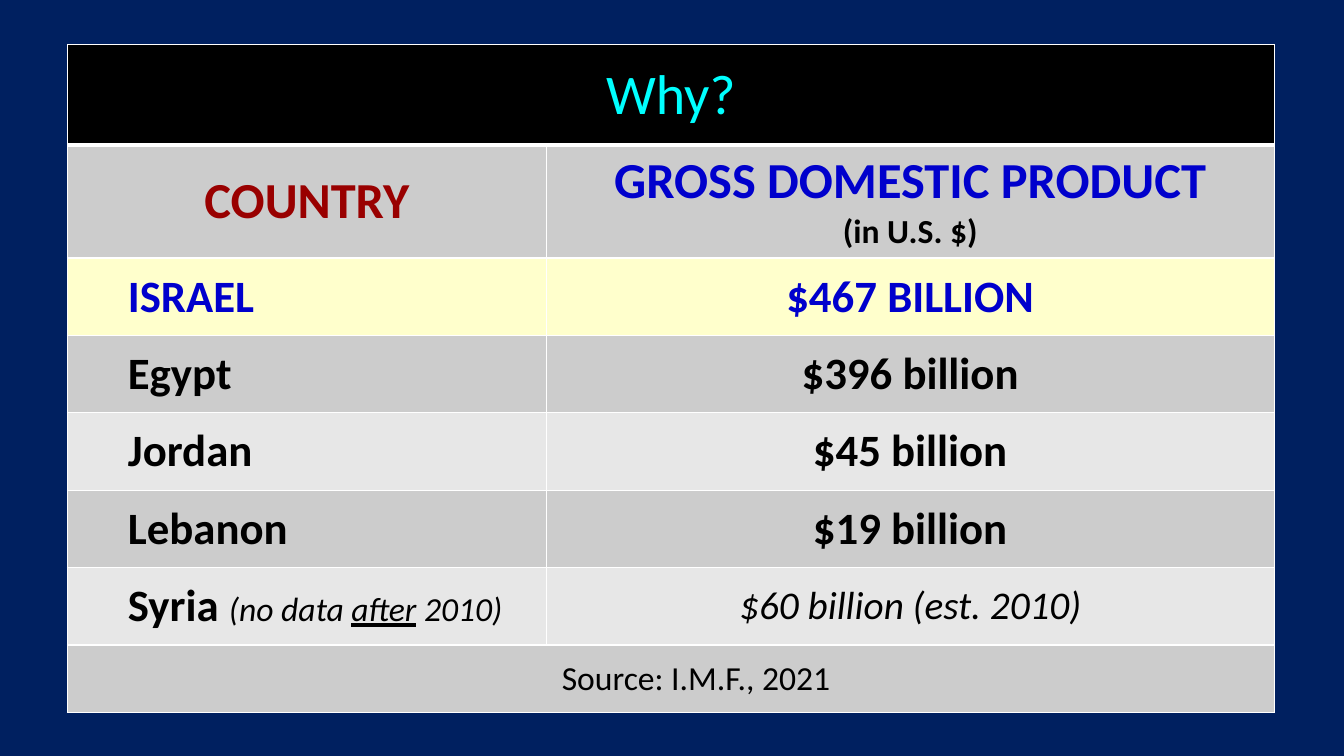
import dataclasses

import lxml.etree
import pptx
import pptx.dml.color
import pptx.enum.text
import pptx.oxml.ns
import pptx.util

Cm = pptx.util.Cm
Pt = pptx.util.Pt
CENTER = pptx.enum.text.PP_ALIGN.CENTER
LEFT = pptx.enum.text.PP_ALIGN.LEFT


@dataclasses.dataclass(frozen=True)
class Theme:
    font: str = "Calibri"
    navy: str = "002060"
    black: str = "000000"
    white: str = "FFFFFF"
    cyan: str = "00FFFF"
    red: str = "990000"
    blue: str = "0000CC"
    yellow: str = "FFFFCC"
    gray: str = "CCCCCC"
    light: str = "E7E7E7"
    title: int = 40
    heading: int = 36
    body: int = 32
    estimate: int = 28
    small: int = 24


THEME = Theme()


def rgb(color):
    return pptx.dml.color.RGBColor.from_string(color)


def add_text(paragraph, text, size=THEME.body, color=THEME.black, bold=True, italic=False, underline=False):
    run = paragraph.add_run()
    run.text = text
    font = run.font
    font.name, font.size = THEME.font, Pt(size)
    font.bold, font.italic, font.underline = bold, italic, underline
    font.color.rgb = rgb(color)


class GdpSlide:
    """Holds the theme and the slide, and draws the table on it."""

    def __init__(self, deck, theme):
        self.theme = theme
        self.slide = deck.slides.add_slide(deck.slide_layouts[6])
        self.slide.background.fill.solid()
        self.slide.background.fill.fore_color.rgb = rgb(theme.navy)

    def table(self, left, top, widths, heights):
        frame = self.slide.shapes.add_table(
            len(heights), len(widths), Cm(left), Cm(top), Cm(sum(widths)), Cm(sum(heights)))
        for column, width in zip(frame.table.columns, widths):
            column.width = Cm(width)
        for row, height in zip(frame.table.rows, heights):
            row.height = Cm(height)
        return frame.table

    def cell(self, cell, fill, bottom=1):
        cell.fill.solid()
        cell.fill.fore_color.rgb = rgb(fill)
        cell.vertical_anchor = pptx.enum.text.MSO_ANCHOR.MIDDLE
        properties = cell._tc.get_or_add_tcPr()
        sides = {"lnL": 1, "lnR": 1, "lnT": 1, "lnB": bottom}
        for position, (side, width) in enumerate(sides.items()):
            line = lxml.etree.Element(pptx.oxml.ns.qn("a:" + side), w=str(Pt(width)))
            solid = lxml.etree.SubElement(line, pptx.oxml.ns.qn("a:solidFill"))
            lxml.etree.SubElement(solid, pptx.oxml.ns.qn("a:srgbClr"), val=self.theme.white)
            properties.insert(position, line)

    def lines(self, cell, *lines, align=CENTER, indent=0, before=20):
        for number, runs in enumerate(lines):
            frame = cell.text_frame
            paragraph = frame.add_paragraph() if number else frame.paragraphs[0]
            paragraph.alignment = align
            properties = paragraph._p.get_or_add_pPr()
            properties.set("marL", str(Cm(indent)))
            properties.set("indent", "0")
            spacing = lxml.etree.SubElement(properties, pptx.oxml.ns.qn("a:spcBef"))
            lxml.etree.SubElement(spacing, pptx.oxml.ns.qn("a:spcPct"), val=str(before * 1000))
            for text, style in runs:
                add_text(paragraph, text, **style)


def main():
    deck = pptx.Presentation()
    deck.slide_width, deck.slide_height = Cm(33.87), Cm(19.05)
    theme = THEME
    page = GdpSlide(deck, theme)

    highlight = dict(color=theme.blue)
    note = dict(size=theme.small, bold=False, italic=True)
    estimate = dict(size=theme.estimate, bold=False, italic=True)
    countries = [
        ([("ISRAEL", highlight)], [("$467 BILLION", highlight)]),
        ([("Egypt", {})], [("$396 billion", {})]),
        ([("Jordan", {})], [("$45 billion", {})]),
        ([("Lebanon", {})], [("$19 billion", {})]),
        ([("Syria ", {}), ("(no data ", note), ("after", dict(note, underline=True)), (" 2010)", note)],
         [("$60 billion (est. 2010)", estimate)]),
    ]

    gdp = page.table(1.7, 1.12, [12.07, 18.34], [2.54, 2.82] + [1.95] * len(countries) + [1.7])
    fills = [theme.black, theme.gray, theme.yellow] + [theme.gray, theme.light] * 2 + [theme.gray]
    for index, fill in enumerate(fills):
        for column in range(2):
            page.cell(gdp.cell(index, column), fill, bottom=1 if index else 3)
    source_row = len(fills) - 1
    for index in (0, source_row):
        gdp.cell(index, 0).merge(gdp.cell(index, 1))

    page.lines(gdp.cell(0, 0), [("Why?", dict(size=theme.title, color=theme.cyan, bold=False))])
    page.lines(gdp.cell(1, 0), [("COUNTRY", dict(size=theme.heading, color=theme.red))])
    page.lines(gdp.cell(1, 1),
               [("GROSS DOMESTIC PRODUCT", dict(size=theme.heading, color=theme.blue))],
               [("(in U.S. $)", dict(size=theme.small))], before=0)
    for index, (country, product) in enumerate(countries, start=2):
        page.lines(gdp.cell(index, 0), country, align=LEFT, indent=1.27)
        page.lines(gdp.cell(index, 1), product)
    page.lines(gdp.cell(source_row, 0),
               [("Source: I.M.F., 2021", dict(size=theme.small, bold=False))], indent=1.27)

    deck.save("out.pptx")


if __name__ == "__main__":
    main()
